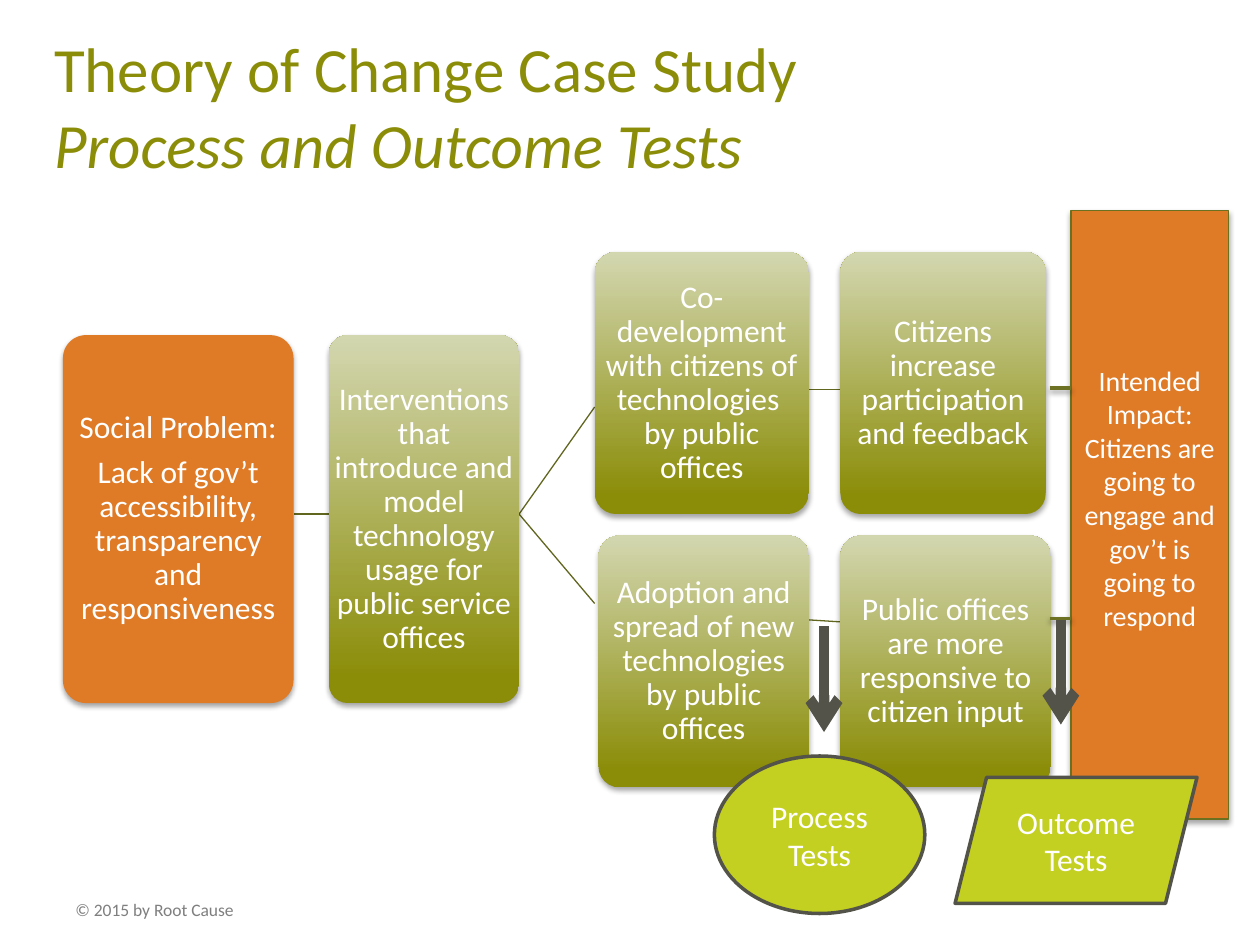
"""Build the theory of change slide with its process and outcome tests."""
from dataclasses import dataclass

from lxml.etree import SubElement
from pptx import Presentation
from pptx.dml.color import RGBColor
from pptx.enum.shapes import MSO_CONNECTOR, MSO_SHAPE as SHAPE
from pptx.enum.text import MSO_ANCHOR, MSO_AUTO_SIZE, PP_ALIGN as ALIGN
from pptx.oxml.ns import qn
from pptx.util import Inches, Pt


@dataclass(frozen=True)
class Theme:
    font: str = "Calibri"
    olive: str = "8B8D09"
    pale: str = "D3D7B0"
    orange: str = "DF7A26"
    lime: str = "C3CF21"
    slate: str = "535349"
    link: str = "61661F"
    impact_link: str = "6C7124"
    impact_edge: str = "6B7021"
    white: str = "FFFFFF"
    grey: str = "7F7F7F"
    title_size: int = 36
    body_size: int = 18
    impact_size: int = 16
    footer_size: int = 10


THEME = Theme()

STEPS = [
    ((0.5, 2.66, 1.83, 2.92), THEME.orange,
     ["Social Problem:", "Lack of gov’t accessibility, transparency and responsiveness"]),
    ((2.61, 2.66, 1.51, 2.92), None,
     ["Interventions that introduce and model technology usage for public service offices"]),
    ((4.72, 2, 1.7, 2.08), None,
     ["Co-development with citizens of technologies  by public offices"]),
    ((6.67, 2, 1.63, 2.08), None,
     ["Citizens increase participation and feedback"]),
    ((4.75, 4.25, 1.67, 2), None,
     ["Adoption and spread of new technologies by public offices"]),
    ((6.67, 4.25, 1.67, 2), None,
     ["Public offices are more responsive to citizen input"]),
]
STEP_LINKS = [
    ((2.33, 4.08), (2.61, 4.08)),
    ((4.12, 4.08), (4.72, 3.23)),
    ((4.12, 4.08), (4.72, 4.79)),
    ((6.42, 3.09), (6.82, 3.09)),
    ((6.42, 4.92), (6.9, 4.95)),
]
IMPACT = ["Intended Impact:", "Citizens are going to engage and gov’t is going to respond"]
TESTS = [
    (SHAPE.OVAL, (5.67, 6, 1.67, 1.25), "Process Tests", (6.54, 4.97), (6.54, 5.81)),
    (SHAPE.PARALLELOGRAM, (7.58, 6.17, 1.92, 1), "Outcome Tests", (8.42, 4.92), (8.42, 5.75)),
]


def add_run(paragraph, text, size, color, italic=None):
    """Append one formatted run to a paragraph."""
    run = paragraph.add_run()
    run.text = text
    run.font.name = THEME.font
    run.font.size = Pt(size)
    run.font.italic = italic
    run.font.color.rgb = RGBColor.from_string(color)


def write(frame, texts, size, color=THEME.white, align=ALIGN.CENTER):
    """Fill a text frame with one paragraph per text."""
    frame.word_wrap = True
    frame.vertical_anchor = MSO_ANCHOR.MIDDLE
    for index, text in enumerate(texts):
        paragraph = frame.paragraphs[0] if index == 0 else frame.add_paragraph()
        paragraph.alignment = align
        add_run(paragraph, text, size, color)


def cast_shadow(effects, opacity=35):
    """Put a soft downward shadow in an effect list."""
    shadow = SubElement(effects, qn("a:outerShdw"), blurRad=str(Pt(3.1)),
                        dist=str(Pt(1.8)), dir="5400000", rotWithShape="0")
    black = SubElement(shadow, qn("a:srgbClr"), val="000000")
    SubElement(black, qn("a:alpha"), val=str(opacity * 1000))


def add_panel(slide, kind, box, fill=None, edge=None, edge_width=0.75, shadow=True):
    """Add a preset shape, with the olive gradient when no fill is given."""
    panel = slide.shapes.add_shape(kind, *map(Inches, box))
    panel.shadow.inherit = False
    if fill:
        panel.fill.solid()
        panel.fill.fore_color.rgb = RGBColor.from_string(fill)
    else:
        panel.fill.gradient()
        panel.fill.gradient_angle = 90
        for stop, color, position in zip(panel.fill.gradient_stops,
                                         (THEME.olive, THEME.pale), (0.07, 1)):
            stop.color.rgb = RGBColor.from_string(color)
            stop.position = position
    if edge:
        panel.line.color.rgb = RGBColor.from_string(edge)
        panel.line.width = Pt(edge_width)
    else:
        panel.line.fill.background()
    if shadow:
        cast_shadow(panel._element.spPr.find(qn("a:effectLst")))
    return panel


def add_link(slide, start, end, color, width, arrow=False, shadow=False):
    """Connect two points with a straight line."""
    link = slide.shapes.add_connector(MSO_CONNECTOR.STRAIGHT, *map(Inches, start + end))
    link.line.color.rgb = RGBColor.from_string(color)
    link.line.width = Pt(width)
    properties = link._element.spPr
    if arrow:
        SubElement(properties.find(qn("a:ln")), qn("a:tailEnd"), type="arrow")
    effects = SubElement(properties, qn("a:effectLst"))
    if shadow:
        cast_shadow(effects, 38)


def add_title(slide):
    """Write the two-line title in its placeholder."""
    title = slide.shapes.title
    title.left, title.top, title.width, title.height = map(Inches, (0.33, 0.42, 9.33, 0.83))
    frame = title.text_frame
    frame.auto_size = MSO_AUTO_SIZE.NONE
    write(frame, ["Theory of Change Case Study"], THEME.title_size, THEME.olive, ALIGN.LEFT)
    heading = frame.paragraphs[0]
    heading.add_line_break()
    add_run(heading, "Process and Outcome Tests", THEME.title_size, THEME.olive, True)


def add_step(slide, box, fill, texts):
    """Add a rounded step of the change chain."""
    step = add_panel(slide, SHAPE.ROUNDED_RECTANGLE, box, fill)
    step.adjustments[0] = 0.1
    frame = step.text_frame
    frame.margin_left = frame.margin_right = 0
    frame.margin_top = frame.margin_bottom = 0
    write(frame, texts, THEME.body_size)
    for paragraph in frame.paragraphs:
        paragraph.line_spacing = 0.9
        paragraph.space_after = Pt(6.3)


def add_impact(slide):
    """Add the tall impact panel and the links that lead into it."""
    impact = add_panel(slide, SHAPE.RECTANGLE, (8.5, 1.67, 1.25, 4.83),
                       THEME.orange, THEME.impact_edge)
    impact.text_frame.margin_bottom = Inches(0.32)
    write(impact.text_frame, IMPACT, THEME.impact_size)
    for y in (3.08, 4.91):
        add_link(slide, (8.33, y), (8.5, y), THEME.impact_link, 2, shadow=True)


def add_test(slide, kind, box, label, start, end):
    """Add a test marker with the arrow that points to it."""
    test = add_panel(slide, kind, box, THEME.lime, THEME.slate, 2, shadow=False)
    write(test.text_frame, [label], THEME.body_size)
    add_link(slide, start, end, THEME.slate, 6, arrow=True)


def add_footer(slide):
    """Add the copyright line."""
    footer = slide.shapes.add_textbox(*map(Inches, (0.5, 7.08, 1.67, 0.27)))
    write(footer.text_frame, ["© 2015 by Root Cause"], THEME.footer_size,
          THEME.grey, ALIGN.LEFT)


def main():
    """Assemble and save the slide."""
    deck = Presentation()
    deck.slide_width, deck.slide_height = Inches(10), Inches(7.5)
    slide = deck.slides.add_slide(deck.slide_layouts[5])
    add_footer(slide)
    add_title(slide)
    for start, end in STEP_LINKS:
        add_link(slide, start, end, THEME.link, 0.75)
    for step in STEPS:
        add_step(slide, *step)
    add_impact(slide)
    for test in TESTS:
        add_test(slide, *test)
    deck.save("out.pptx")


if __name__ == "__main__":
    main()
